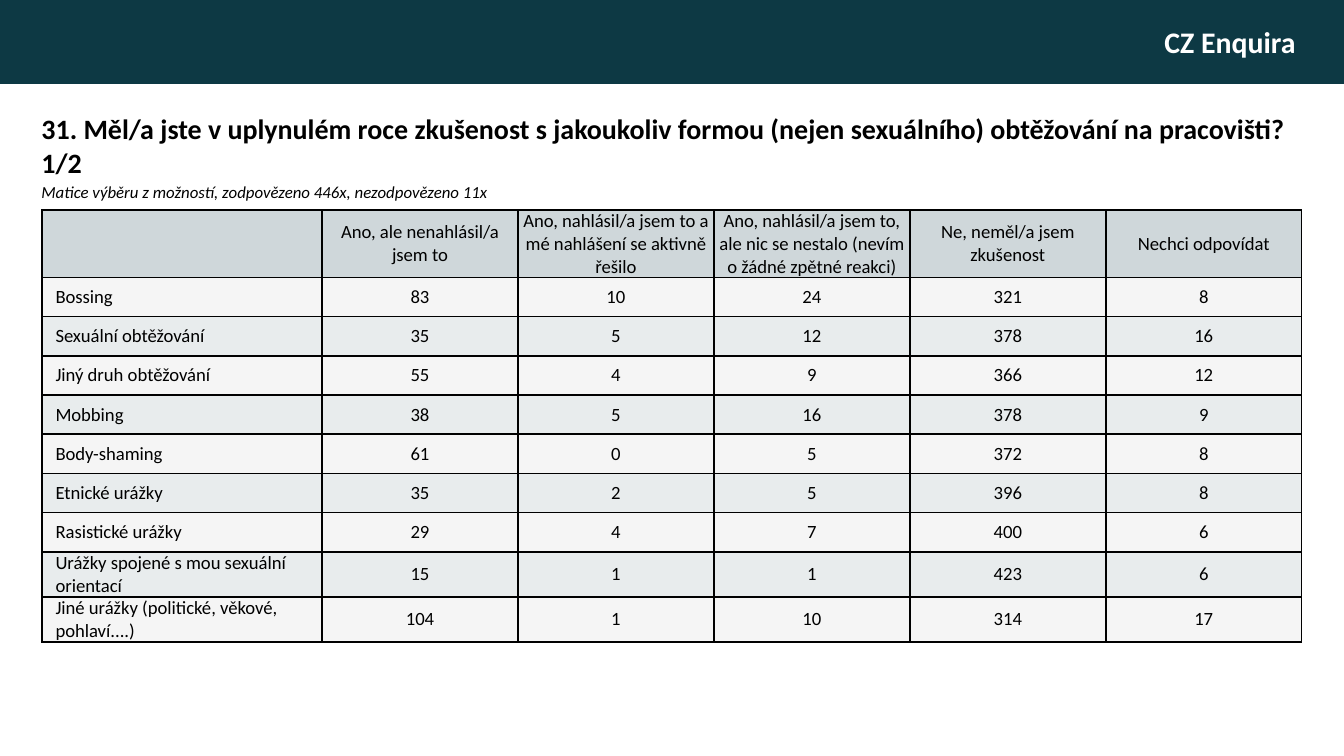
from dataclasses import dataclass

from lxml import etree
from pptx import Presentation, util as u
from pptx.dml.color import RGBColor
from pptx.enum import shapes, text
from pptx.oxml import ns


@dataclass(frozen=True)
class Theme:
    font: str = "Calibri"
    banner: str = "0D3944"
    on_banner: str = "FFFFFF"
    ink: str = "000000"
    header: str = "CFD7DA"
    bands: tuple[str, str] = ("F5F5F5", "E8ECED")
    banner_size: float = 16
    title_size: float = 15
    note_size: float = 9
    table_size: float = 10
    border: float = 1


@dataclass(frozen=True)
class Box:
    """A rectangle in percent of the slide's width and height."""
    x: float
    y: float
    w: float
    h: float

    def place(self) -> tuple[int, int, int, int]:
        return (int(W * self.x / 100), int(H * self.y / 100),
                int(W * self.w / 100), int(H * self.h / 100))


@dataclass(frozen=True)
class Answer:
    label: str
    counts: tuple[int, ...]


THEME = Theme()
W = u.Inches(10)
H = W * 9 // 16
LABEL_COL, COUNT_COL, ROW = 20.83, 14.58, 5.19  # percent of the slide

OPTIONS = (
    "Ano, ale nenahlásil/a jsem to",
    "Ano, nahlásil/a jsem to a mé nahlášení se aktivně řešilo",
    "Ano, nahlásil/a jsem to, ale nic se nestalo (nevím o žádné zpětné reakci)",
    "Ne, neměl/a jsem zkušenost",
    "Nechci odpovídat",
)
ANSWERS = (
    Answer("Bossing", (83, 10, 24, 321, 8)),
    Answer("Sexuální obtěžování", (35, 5, 12, 378, 16)),
    Answer("Jiný druh obtěžování", (55, 4, 9, 366, 12)),
    Answer("Mobbing", (38, 5, 16, 378, 9)),
    Answer("Body-shaming", (61, 0, 5, 372, 8)),
    Answer("Etnické urážky", (35, 2, 5, 396, 8)),
    Answer("Rasistické urážky", (29, 4, 7, 400, 6)),
    Answer("Urážky spojené s mou sexuální orientací", (15, 1, 1, 423, 6)),
    Answer("Jiné urážky (politické, věkové, pohlaví....)", (104, 1, 10, 314, 17)),
)


def write(tf, words: str, size: float, color: str = THEME.ink, bold: bool = False,
          italic: bool = False, align=text.PP_ALIGN.LEFT):
    p = tf.paragraphs[0]
    p.text = words
    p.alignment = align
    f = p.font
    f.name, f.size, f.bold, f.italic = THEME.font, u.Pt(size), bold, italic
    f.color.rgb = RGBColor.from_string(color)
    return p


def add_banner(s, box: Box, words: str) -> None:
    sp = s.shapes.add_shape(shapes.MSO_SHAPE.RECTANGLE, *box.place())
    sp.shadow.inherit = False
    sp.fill.solid()
    sp.fill.fore_color.rgb = RGBColor.from_string(THEME.banner)
    sp.line.fill.background()
    tf = sp.text_frame
    tf.word_wrap = True
    tf.vertical_anchor = text.MSO_ANCHOR.MIDDLE
    tf.margin_right = u.Inches(0.36)
    write(tf, words, THEME.banner_size, THEME.on_banner, bold=True,
          align=text.PP_ALIGN.RIGHT)


def add_text(s, box: Box, words: str, size: float, **style) -> None:
    tf = s.shapes.add_textbox(*box.place()).text_frame
    tf.word_wrap = True
    write(tf, words, size, **style)


def add_borders(cell) -> None:
    tc_pr = cell._tc.get_or_add_tcPr()
    for side in ("a:lnL", "a:lnR", "a:lnT", "a:lnB"):
        ln = etree.SubElement(tc_pr, ns.qn(side), w=str(u.Pt(THEME.border)))
        fill = etree.SubElement(ln, ns.qn("a:solidFill"))
        etree.SubElement(fill, ns.qn("a:srgbClr"), val=THEME.ink)


def fill_cell(cell, words: str, color: str, is_label: bool) -> None:
    add_borders(cell)
    cell.fill.solid()
    cell.fill.fore_color.rgb = RGBColor.from_string(color)
    cell.vertical_anchor = text.MSO_ANCHOR.MIDDLE
    cell.margin_left = u.Inches(0.05 if is_label else 0)
    cell.margin_right = cell.margin_top = cell.margin_bottom = 0
    align = text.PP_ALIGN.LEFT if is_label else text.PP_ALIGN.CENTER
    p = write(cell.text_frame, words, THEME.table_size, align=align)
    if is_label:
        p._p.get_or_add_pPr().set("marL", str(u.Inches(0.05)))


def add_answer_table(s, x: float, y: float) -> None:
    rows = [("", *OPTIONS)] + [(a.label, *map(str, a.counts)) for a in ANSWERS]
    widths = [LABEL_COL] + [COUNT_COL] * len(OPTIONS)
    box = Box(x, y, sum(widths), ROW * len(rows))
    table = s.shapes.add_table(len(rows), len(widths), *box.place()).table
    table.horz_banding = False
    for column, width in zip(table.columns, widths):
        column.width = int(W * width / 100)
    for i, row in enumerate(rows):
        table.rows[i].height = int(H * ROW / 100)
        color = THEME.bands[(i - 1) % 2] if i else THEME.header
        for j, words in enumerate(row):
            fill_cell(table.cell(i, j), words, color, is_label=i > 0 and j == 0)


def main() -> None:
    prs = Presentation()
    prs.slide_width, prs.slide_height = W, H
    s = prs.slides.add_slide(prs.slide_layouts[6])
    add_banner(s, Box(0, 0, 100, 11.1), "CZ Enquira")
    add_text(s, Box(2.1, 23.13, 41.7, 11.1),
             "Matice výběru z možností, zodpovězeno 446x, nezodpovězeno 11x",
             THEME.note_size, italic=True)
    add_answer_table(s, 3.13, 27.79)
    add_text(s, Box(2.1, 13.92, 95.8, 9.25),
             "31. Měl/a jste v uplynulém roce zkušenost s jakoukoliv formou "
             "(nejen sexuálního) obtěžování na pracovišti? 1/2",
             THEME.title_size, bold=True)
    prs.save("out.pptx")


if __name__ == "__main__":
    main()
